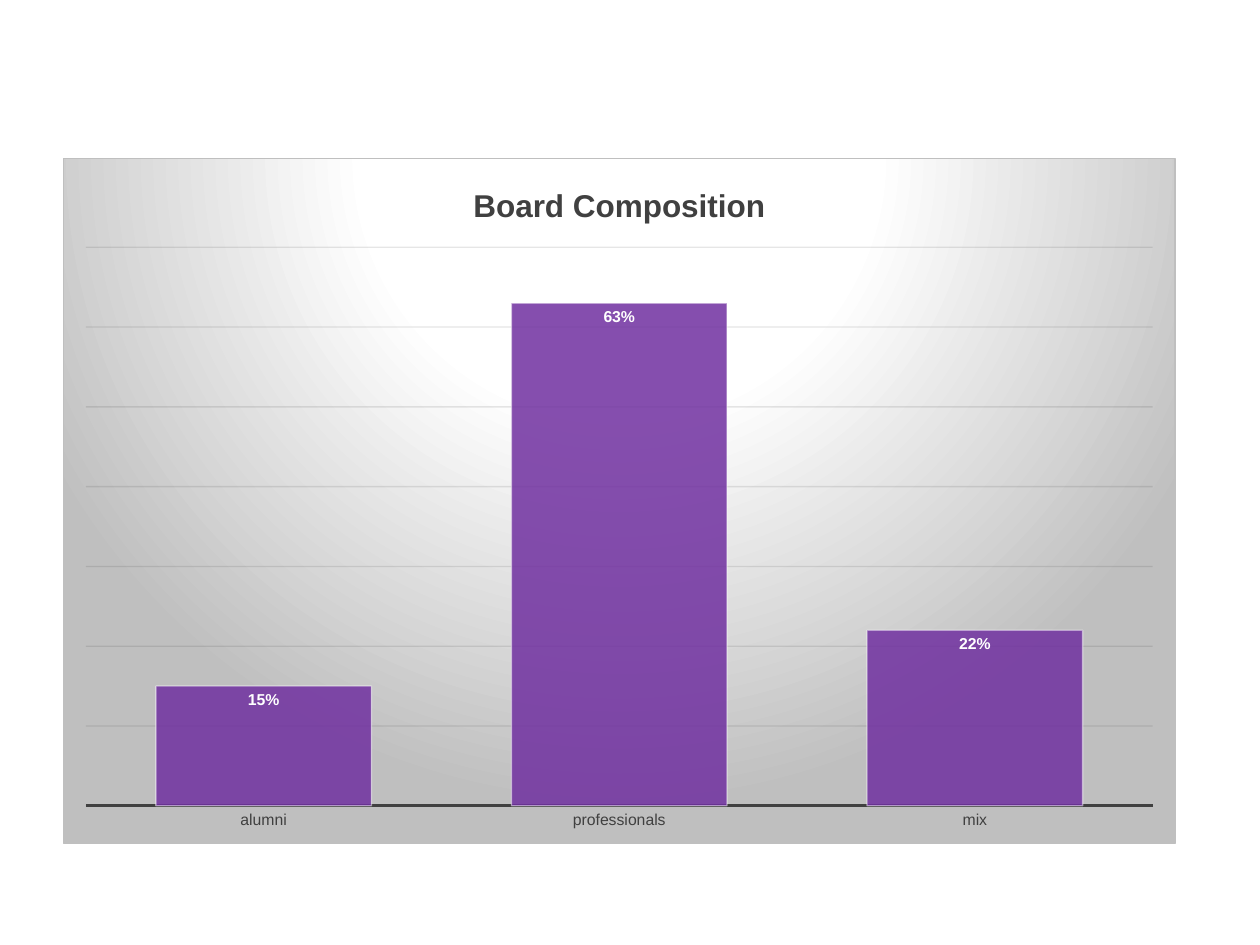
from pptx import Presentation
from pptx.chart.data import CategoryChartData
from pptx.dml.color import RGBColor
from pptx.enum import chart as ch
from pptx.oxml import parse_xml
from pptx.oxml.ns import nsdecls
from pptx.util import Cm, Pt

PURPLE = RGBColor(0x70, 0x30, 0xA0)
WHITE = RGBColor(0xFF, 0xFF, 0xFF)
DARK = RGBColor(0x40, 0x40, 0x40)
GRID = RGBColor(0x0D, 0x0D, 0x0D)
SILVER = RGBColor(0xBF, 0xBF, 0xBF)


def style_font(font, size, color, bold=False):
    font.name = "Arial"
    font.size = Pt(size)
    font.bold = bold
    font.color.rgb = color


def set_opacity(root, path, percent):
    for color in root.xpath(path + "/a:solidFill/a:srgbClr"):
        color.append(parse_xml(f'<a:alpha {nsdecls("a")} val="{percent * 1000}"/>'))


prs = Presentation()
prs.slide_width, prs.slide_height = Cm(25.4), Cm(19.05)
s = prs.slides.add_slide(prs.slide_layouts[6])

data = CategoryChartData(number_format="0%")
data.categories = ["alumni", "professionals", "mix"]
data.add_series("Series 1", [0.15, 0.63, 0.22])
chart = s.shapes.add_chart(ch.XL_CHART_TYPE.COLUMN_CLUSTERED,
                           Cm(1.27), Cm(3.18), Cm(22.43), Cm(13.84), data).chart
style_font(chart.font, 10, RGBColor(0, 0, 0))
chart.has_legend = False

# Title
chart.has_title = True
tf = chart.chart_title.text_frame
tf.text = "Board Composition"
style_font(tf.paragraphs[0].font, 18, DARK, True)
chart.chart_title.include_in_layout = False

# Axes
axis = chart.category_axis
axis.major_tick_mark = ch.XL_TICK_MARK.NONE
axis.format.line.color.rgb = DARK
axis.format.line.width = Pt(1.5)
style_font(axis.tick_labels.font, 9, DARK)

axis = chart.value_axis
axis.visible = False
axis.minimum_scale, axis.maximum_scale, axis.major_unit = 0, 0.7, 0.1
axis.tick_labels.number_format = "0%"
axis.tick_labels.number_format_is_linked = False
axis.has_major_gridlines = True
axis.major_gridlines.format.line.color.rgb = GRID
axis.major_gridlines.format.line.width = Pt(0.75)

# Columns and their labels
plot = chart.plots[0]
plot.gap_width = 65
plot.vary_by_categories = False
columns = plot.series[0]
columns.format.fill.solid()
columns.format.fill.fore_color.rgb = PURPLE
columns.format.line.color.rgb = WHITE
columns.format.line.width = Pt(0.75)
labels = columns.data_labels
labels.show_value = True
labels.position = ch.XL_LABEL_POSITION.INSIDE_END
labels.number_format = "0%"
labels.number_format_is_linked = False
style_font(labels.font, 9, WHITE, True)

root = chart.element
set_opacity(root, ".//c:ser/c:spPr", 85)
set_opacity(root, ".//c:ser/c:spPr/a:ln", 50)
set_opacity(root, ".//c:majorGridlines/c:spPr/a:ln", 10)

# Fixed plot area
for old in root.xpath(".//c:plotArea/c:layout"):
    old.getparent().remove(old)
root.xpath(".//c:plotArea")[0].insert(0, parse_xml(
    f'<c:layout {nsdecls("c")}><c:manualLayout><c:layoutTarget val="inner"/>'
    '<c:xMode val="edge"/><c:yMode val="edge"/><c:x val="0.02"/><c:y val="0.13"/>'
    '<c:w val="0.96"/><c:h val="0.815"/></c:manualLayout></c:layout>'))

# Radial background with a thin border
stops = "".join(f'<a:gs pos="{pos * 1000}"><a:srgbClr val="{color}"/></a:gs>'
                for pos, color in [(0, WHITE), (39, WHITE), (100, SILVER)])
root.xpath("c:chart")[0].addnext(parse_xml(
    f'<c:spPr {nsdecls("c", "a")}><a:gradFill><a:gsLst>{stops}</a:gsLst>'
    '<a:path path="circle"><a:fillToRect l="50000" t="-80000" r="50000" b="180000"/>'
    f'</a:path></a:gradFill><a:ln w="{Pt(0.75)}"><a:solidFill><a:srgbClr val="{SILVER}"/>'
    '</a:solidFill></a:ln></c:spPr>'))

prs.save("out.pptx")
